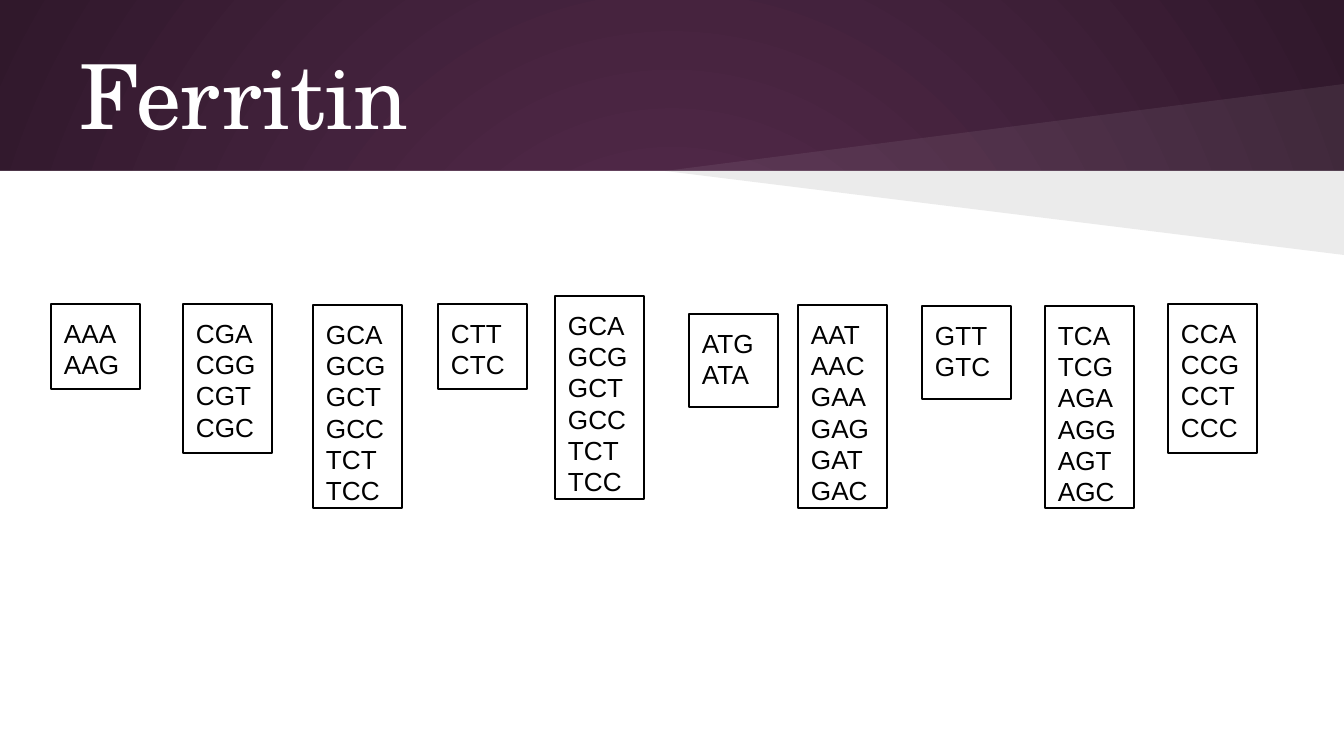
from copy import deepcopy

from lxml.etree import SubElement
from pptx import Presentation
from pptx.dml.color import RGBColor
from pptx.enum.shapes import MSO_SHAPE as SHAPE
from pptx.enum.text import MSO_ANCHOR as ANCHOR, PP_ALIGN as ALIGN
from pptx.oxml.ns import qn
from pptx.util import Pt

PX = 914400 / 134.4
WIDTH, HEIGHT, HEADER = 1344, 756, 171
INSET, BOX_WIDTH = 13, 89
TITLE = "Ferritin"
GLOW = [("592D50", 0), ("30182B", 1)]
# left, top, height, codons: a space breaks the line, a bar starts a paragraph
CODON_BOXES = [
    (51, 304, 85, "AAA AAG"),
    (183, 304, 149, "CGA CGG CGT CGC"),
    (313, 305, 203, "GCA GCG GCT GCC TCTTCC"),
    (438, 304, 85, "CTT CTC"),
    (555, 296, 203, "GCA GCG GCT GCC TCTTCC"),
    (689, 314, 93, "ATG ATA"),
    (798, 305, 203, "AAT AAC GAA GAG|GAT|GAC"),
    (922, 306, 93, "GTT GTC"),
    (1045, 306, 202, "TCA TCG|AGA AGG AGT AGC"),
    (1168, 304, 149, "CCA CCG CCT CCC"),
]
# far corner height, colour, opacity in percent
BEAMS = [(84, "FFFFFF", 7), (255, "000000", 8)]


def px(n):
    return round(n * PX)


def rgb(value):
    return RGBColor.from_string(value)


def paint_background(slide):
    fill = slide.background.fill
    fill.gradient()
    for stop, (color, position) in zip(fill.gradient_stops, GLOW):
        stop.color.rgb = rgb(color)
        stop.position = position
    grad = slide.background._cSld.find(".//" + qn("a:gradFill"))
    grad.remove(grad.find(qn("a:lin")))
    path = SubElement(grad, qn("a:path"), path="circle")
    SubElement(path, qn("a:fillToRect"), l="50000", t="50000", r="50000", b="50000")


def add_beam(slide, far_y, color, opacity):
    builder = slide.shapes.build_freeform(WIDTH, HEADER, scale=PX)
    builder.add_line_segments([(665, HEADER), (WIDTH, far_y)])
    s = builder.convert_to_shape()
    s.shadow.inherit = False
    s.fill.solid()
    s.fill.fore_color.rgb = rgb(color)
    s.line.fill.background()
    clr = s._element.spPr.find(".//" + qn("a:srgbClr"))
    SubElement(clr, qn("a:alpha"), val=str(opacity * 1000))


def add_rect(slide, left, top, width, height):
    s = slide.shapes.add_shape(SHAPE.RECTANGLE, px(left), px(top), px(width), px(height))
    s.shadow.inherit = False
    return s


def write(s, text, size, font, color, anchor):
    tf = s.text_frame
    tf.word_wrap = True
    tf.vertical_anchor = anchor
    tf.margin_left = tf.margin_right = tf.margin_top = tf.margin_bottom = px(INSET)
    tf.text = text
    for p in tf.paragraphs:
        p.alignment = ALIGN.LEFT
        for r in p.runs:
            r.font.size = Pt(size)
            r.font.name = font
            r.font.color.rgb = rgb(color)
        for br in p._p.findall(qn("a:br")):
            br.append(deepcopy(p.runs[0]._r.rPr))


def main():
    """Build the Ferritin codon slide."""
    prs = Presentation()
    prs.slide_width, prs.slide_height = px(WIDTH), px(HEIGHT)
    slide = prs.slides.add_slide(prs.slide_layouts[6])
    paint_background(slide)

    body = add_rect(slide, 0, HEADER, WIDTH, HEIGHT - HEADER)
    body.fill.solid()
    body.fill.fore_color.rgb = rgb("FFFFFF")
    body.line.fill.background()
    for beam in BEAMS:
        add_beam(slide, *beam)

    title = slide.shapes.add_textbox(px(67), px(31), px(1210), px(126))
    write(title, TITLE, 48, "TeX Gyre Schola", "FFFFFF", ANCHOR.MIDDLE)

    for left, top, height, codons in CODON_BOXES:
        s = add_rect(slide, left, top, BOX_WIDTH, height)
        s.fill.background()
        s.line.color.rgb = rgb("000000")
        s.line.width = Pt(0.75)
        text = codons.replace(" ", "\v").replace("|", "\n")
        write(s, text, 14, "Arial", "000000", ANCHOR.TOP)

    prs.save("out.pptx")


if __name__ == "__main__":
    main()
